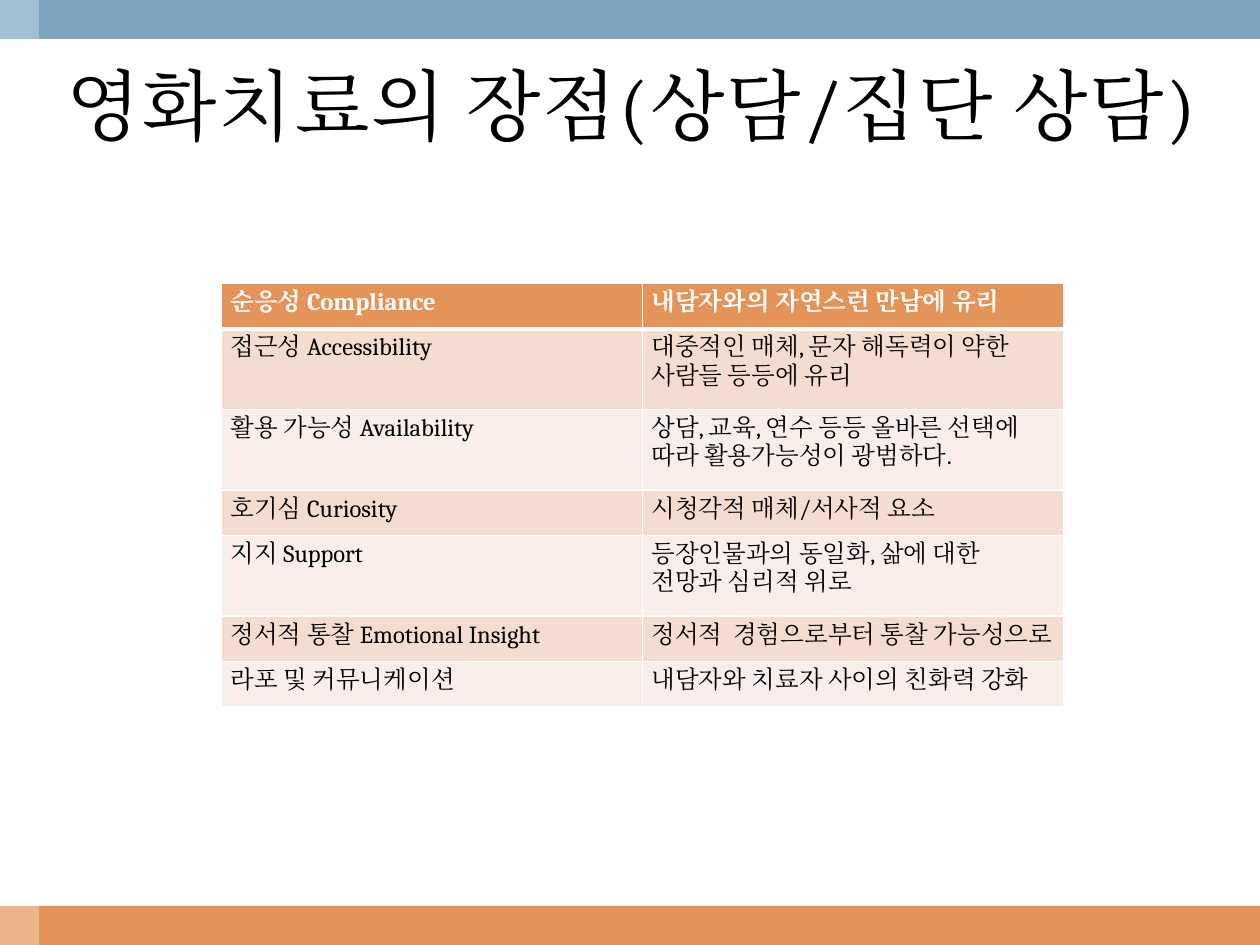
from lxml import etree
from pptx import Presentation
from pptx.dml.color import RGBColor
from pptx.enum.lang import MSO_LANGUAGE_ID
from pptx.enum.shapes import MSO_SHAPE
from pptx.enum.text import MSO_ANCHOR, PP_ALIGN
from pptx.oxml.ns import qn
from pptx.util import Inches, Pt

RECTANGLE = MSO_SHAPE.RECTANGLE
MIDDLE = MSO_ANCHOR.MIDDLE
LEFT, CENTER = PP_ALIGN.LEFT, PP_ALIGN.CENTER
KOREAN = MSO_LANGUAGE_ID.KOREAN

WIDTH, HEIGHT = 10, 7.5
BAND = 0.31
FONT = "Cambria"
ORANGE, BLUE, WHITE, BLACK = "E49458", "7BA5BE", "FFFFFF", "000000"
ROW_FILLS = ("F5DCD1", "FAEEEA")
ONE_LINE, TWO_LINES = 0.36, 0.64

TITLE = "영화치료의 장점(상담/집단 상담)"
ADVANTAGES = [
    ("순응성 Compliance", "내담자와의 자연스런 만남에 유리", ONE_LINE),
    ("접근성 Accessibility", "대중적인 매체, 문자 해독력이 약한 사람들 등등에 유리", TWO_LINES),
    ("활용 가능성 Availability",
     "상담, 교육, 연수 등등 올바른 선택에 따라 활용가능성이 광범하다.", TWO_LINES),
    ("호기심 Curiosity", "시청각적 매체/서사적 요소", ONE_LINE),
    ("지지 Support", "등장인물과의 동일화, 삶에 대한 전망과 심리적 위로", TWO_LINES),
    ("정서적 통찰 Emotional Insight", "정서적  경험으로부터 통찰 가능성으로", ONE_LINE),
    ("라포 및 커뮤니케이션", "내담자와 치료자 사이의 친화력 강화", ONE_LINE),
]


def color(value):
    return RGBColor.from_string(value)


def write(frame, text, size=14, fill=BLACK, bold=False, align=LEFT, spacing=0):
    frame.word_wrap = True
    para = frame.paragraphs[0]
    para.alignment = align
    span = para.add_run()
    span.text = text
    span.font.name = FONT
    span.font.size = Pt(size)
    span.font.bold = bold
    span.font.color.rgb = color(fill)
    span.font.language_id = KOREAN
    # The same typeface serves Korean text, including its spaces
    etree.SubElement(span.font._element, qn("a:ea"), typeface=FONT)
    if spacing:
        span.font._element.set("spc", str(spacing * 100))


def add_band(page, left, top, width, height, fill, opacity=100):
    band = page.shapes.add_shape(
        RECTANGLE, Inches(left), Inches(top), Inches(width), Inches(height))
    band.shadow.inherit = False
    band.line.fill.background()
    band.fill.solid()
    band.fill.fore_color.rgb = color(fill)
    if opacity < 100:
        tint = band.fill._xPr.find(".//" + qn("a:srgbClr"))
        etree.SubElement(tint, qn("a:alpha"), val=str(opacity * 1000))


def add_title(page, text):
    box = page.shapes.add_textbox(
        Inches(0.33), Inches(BAND), Inches(9.36), Inches(1.03))
    box.text_frame.vertical_anchor = MIDDLE
    write(box.text_frame, text, size=44, align=CENTER, spacing=1)


def set_borders(cell, **widths):
    """Draw white borders; the sides are given in schema order L, R, T, B."""
    properties = cell._tc.get_or_add_tcPr()
    for index, (side, width) in enumerate(widths.items()):
        line = etree.Element(qn("a:ln" + side), w=str(Pt(width)))
        fill = etree.SubElement(line, qn("a:solidFill"))
        etree.SubElement(fill, qn("a:srgbClr"), val=WHITE)
        properties.insert(index, line)


def add_advantage_table(page, rows):
    total = sum(height for *_, height in rows)
    table = page.shapes.add_table(
        len(rows), 2, Inches(1.76), Inches(2.25), Inches(6.68), Inches(total)).table
    for row_index, (*texts, height) in enumerate(rows):
        header = row_index == 0
        table.rows[row_index].height = Inches(height)
        for column, text in enumerate(texts):
            cell = table.cell(row_index, column)
            cell.margin_left, cell.margin_right = Inches(0.07), Inches(0.08)
            cell.margin_top = cell.margin_bottom = Inches(0.04)
            cell.fill.solid()
            cell.fill.fore_color.rgb = color(
                ORANGE if header else ROW_FILLS[(row_index - 1) % 2])
            set_borders(cell, L=1, R=1, T=3 if row_index == 1 else 1,
                        B=3 if header else 1)
            write(cell.text_frame, text, fill=WHITE if header else BLACK, bold=header)


def main():
    deck = Presentation()
    deck.slide_width, deck.slide_height = Inches(WIDTH), Inches(HEIGHT)
    page = deck.slides.add_slide(deck.slide_layouts[6])

    # Bottom and top bands, lightened by a strip along the left edge
    add_band(page, 0, HEIGHT - BAND, WIDTH, BAND, ORANGE)
    add_band(page, 0, 0, WIDTH, BAND, BLUE)
    add_band(page, 0, 0, BAND, HEIGHT, WHITE, opacity=30)

    # Title and table
    add_title(page, TITLE)
    add_advantage_table(page, ADVANTAGES)
    deck.save("out.pptx")


if __name__ == "__main__":
    main()
